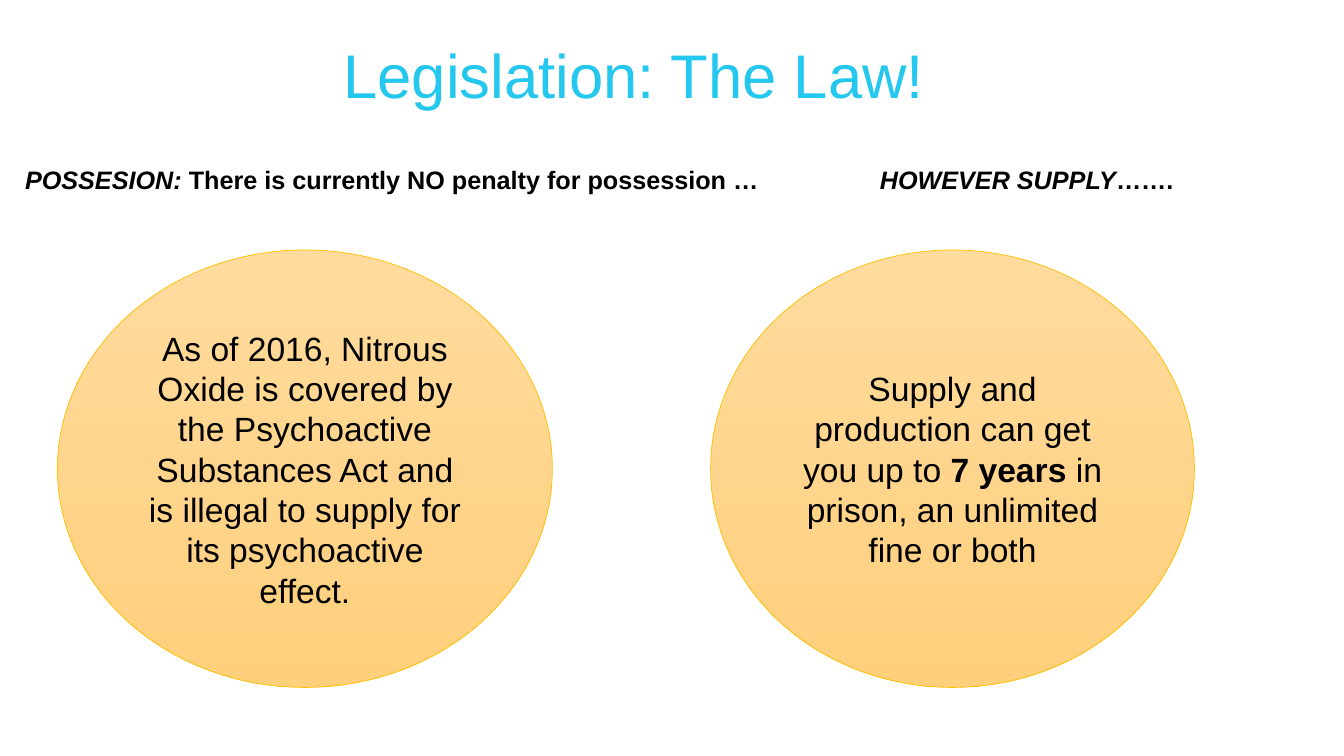
from pptx import Presentation
from pptx.dml.color import RGBColor
from pptx.enum.shapes import MSO_SHAPE
from pptx.enum.text import MSO_ANCHOR, PP_ALIGN
from pptx.util import Pt

TITLE_ONLY = 5
BLACK, CYAN, AMBER = "000000", "24C7ED", "FFC000"
GRADIENT = ("FFDB9E", "FFD07C")
HEADING_TOP, HEADING_HEIGHT = 113.76, 28.8
CIRCLE_TOP, CIRCLE_HEIGHT = 178.56, 312.48


def color(value):
    return RGBColor.from_string(value)


def write(shape, spans, size, ink=BLACK, align=PP_ALIGN.CENTER, anchor=MSO_ANCHOR.MIDDLE):
    """Fill the shape with one paragraph of (text, font format) spans."""
    frame = shape.text_frame
    frame.word_wrap = True
    frame.vertical_anchor = anchor
    para = frame.paragraphs[0]
    para.alignment = align
    for text, style in spans:
        span = para.add_run()
        span.text = text
        span.font.color.rgb = color(ink)
        for name, value in {"name": "Arial", "size": Pt(size), **style}.items():
            setattr(span.font, name, value)
    return para


def set_title(page, text):
    title = page.shapes.title
    place = {"left": 23.04, "top": 21.6, "width": 859.68, "height": 69.12}
    for name, value in place.items():
        setattr(title, name, Pt(value))
    write(title, [(text, {})], 44, CYAN).line_spacing = 0.9


def add_heading(page, left, width, label, rest, align):
    box = page.shapes.add_textbox(Pt(left), Pt(HEADING_TOP), Pt(width), Pt(HEADING_HEIGHT))
    spans = [(label, {"bold": True, "italic": True}), (rest, {"bold": True})]
    write(box, spans, 18, align=align, anchor=MSO_ANCHOR.TOP)


def add_circle(page, left, width, spans):
    circle = page.shapes.add_shape(
        MSO_SHAPE.OVAL, Pt(left), Pt(CIRCLE_TOP), Pt(width), Pt(CIRCLE_HEIGHT))
    circle.shadow.inherit = False
    circle.fill.gradient()
    circle.fill.gradient_angle = 270
    for stop, value in zip(circle.fill.gradient_stops, GRADIENT):
        stop.color.rgb = color(value)
    circle.line.color.rgb = color(AMBER)
    circle.line.width = Pt(0.5)
    write(circle, spans, 24)


def main():
    deck = Presentation()
    deck.slide_width, deck.slide_height = Pt(960), Pt(540)
    page = deck.slides.add_slide(deck.slide_layouts[TITLE_ONLY])
    set_title(page, "Legislation: The Law!")
    add_heading(page, 10.8, 582.48, "POSSESION: ",
                "There is currently NO penalty for possession …", PP_ALIGN.LEFT)
    add_heading(page, 583.92, 298.8, "HOWEVER SUPPLY", "…….", PP_ALIGN.CENTER)
    add_circle(page, 41.04, 353.52, [
        ("As of 2016, Nitrous Oxide is covered by the Psychoactive Substances Act "
         "and is illegal to supply for its psychoactive effect.", {})])
    add_circle(page, 507.6, 345.6, [
        ("Supply and production can get you up to ", {}),
        ("7 years ", {"bold": True}),
        ("in prison, an unlimited fine or both", {})])
    deck.save("out.pptx")


if __name__ == "__main__":
    main()
